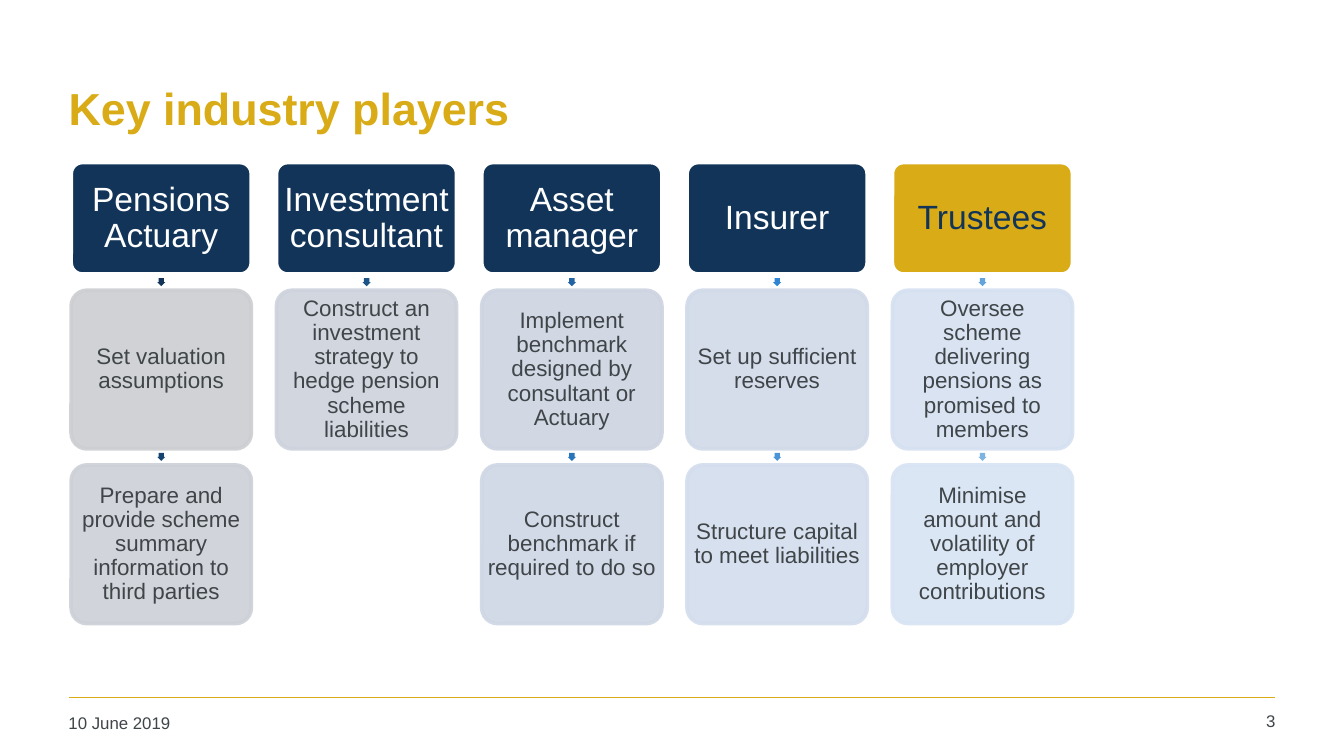
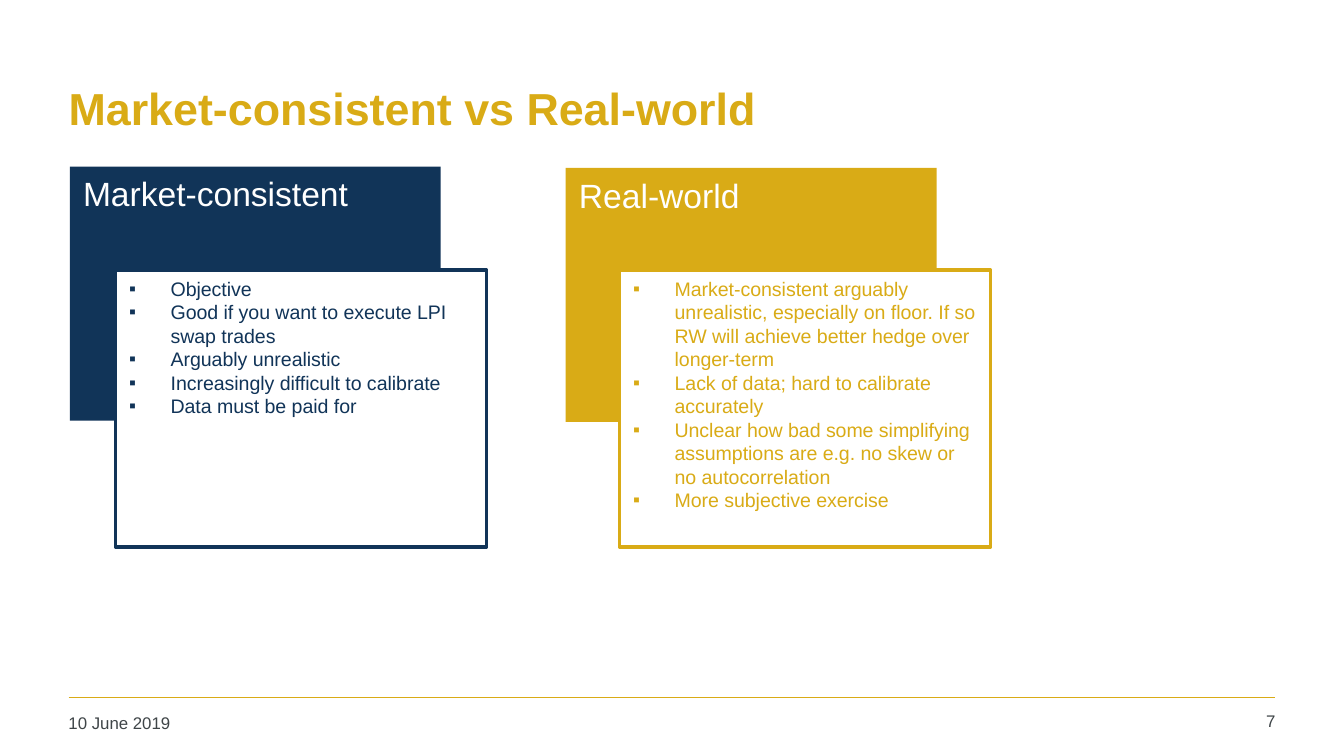
from lxml.etree import SubElement
from pptx import Presentation
from pptx.dml.color import RGBColor
from pptx.enum.shapes import MSO_CONNECTOR, MSO_SHAPE
from pptx.enum.text import MSO_ANCHOR, MSO_AUTO_SIZE, PP_ALIGN
from pptx.oxml.ns import qn
from pptx.util import Inches, Pt

NAVY, GOLD, GREY, WHITE = "113458", "D9AB16", "3F4548", "FFFFFF"


def paint(item, fill=None, line=None, width=2, alpha=None):
    """Set fill and outline from hex strings; alpha is a percentage."""
    for part, tone in ((item.fill, fill), (item.line.fill, line)):
        if tone is None:
            part.background()
            continue
        part.solid()
        part.fore_color.rgb = RGBColor.from_string(tone)
    if line:
        item.line.width = Pt(width)
    if alpha:
        for tone in item._element.spPr.iter(qn("a:srgbClr")):
            SubElement(tone, qn("a:alpha"), val=str(alpha * 1000))


def style(item, size, tone, align=PP_ALIGN.LEFT, anchor=MSO_ANCHOR.TOP,
          inset=(0.1, 0.05), bold=False, space=1.0):
    """Format all text in a shape."""
    frame = item.text_frame
    frame.word_wrap = True
    frame.auto_size = MSO_AUTO_SIZE.NONE
    frame.vertical_anchor = anchor
    frame.margin_left = frame.margin_right = Inches(inset[0])
    frame.margin_top = frame.margin_bottom = Inches(inset[1])
    for para in frame.paragraphs:
        para.alignment = align
        para.line_spacing = space
        para.space_before = Pt(0)
        for run in para.runs:
            run.font.name = "Arial"
            run.font.size = Pt(size)
            run.font.bold = bold
            run.font.color.rgb = RGBColor.from_string(tone)


deck = Presentation()
deck.slide_width = Inches(10)
deck.slide_height = deck.slide_width * 9 // 16

# Shared frame: title, gold rule, date and page number
TITLES = (("Key industry players", "3", 5),
          ("Market-consistent vs Real-world", "7", 3))
pages = []
for title, num, layout in TITLES:
    page = deck.slides.add_slide(deck.slide_layouts[layout])
    pages.append(page)
    head = page.shapes.title
    head.left, head.top = Inches(0.43), Inches(0.33)
    head.width, head.height = Inches(9.07), Inches(0.94)
    head.text_frame.text = title
    style(head, 24, GOLD, anchor=MSO_ANCHOR.MIDDLE, inset=(0.08, 0.04), bold=True)

    rule = page.shapes.add_connector(MSO_CONNECTOR.STRAIGHT, Inches(0.51),
                                     Inches(5.19), Inches(9.49), Inches(5.19))
    rule.line.color.rgb = RGBColor.from_string(GOLD)
    rule.line.width = Pt(1)
    SubElement(rule._element.spPr, qn("a:effectLst"))

    for text, left, top, width, align in (
            ("10 June 2019", 0.43, 5.26, 2.2, PP_ALIGN.LEFT),
            (num, 8.86, 5.25, 0.71, PP_ALIGN.RIGHT)):
        foot = page.shapes.add_textbox(Inches(left), Inches(top),
                                       Inches(width), Inches(0.27))
        foot.text_frame.text = text
        style(foot, 9, GREY, align, inset=(0.08, 0.04))

# Slide 1: one column per player; each duty has text, box tone, arrow tone
PLAYERS = (
    ("Pensions Actuary", NAVY, WHITE, (
        ("Set valuation assumptions", "CCCED1", "113458"),
        ("Prepare and provide scheme summary information to third parties",
         "CDD0D7", "164471"))),
    ("Investment consultant", NAVY, WHITE, (
        ("Construct an investment strategy to hedge pension scheme liabilities",
         "CDD2DC", "1C548A"),)),
    ("Asset manager", NAVY, WHITE, (
        ("Implement benchmark designed by consultant or Actuary",
         "CED4E1", "2264A3"),
        ("Construct benchmark if required to do so", "CFD7E5", "2874BB"))),
    ("Insurer", NAVY, WHITE, (
        ("Set up sufficient reserves", "D1DAE9", "2F85D2"),
        ("Structure capital to meet liabilities", "D3DDED", "4995D7"))),
    ("Trustees", GOLD, NAVY, (
        ("Oversee scheme delivering pensions as promised to members",
         "D5E1F1", "63A4DC"),
        ("Minimise amount and volatility of employer contributions",
         "D8E4F4", "7CB3E1"))),
)
FIRST, LAST, WIDE = 0.53, 6.64, 1.34
STEP = (LAST - FIRST) / (len(PLAYERS) - 1)
ROWS = ((2.16, 2.07), (3.46, 3.37))  # tops of box and arrow

shapes = pages[0].shapes
for col, (name, fill, ink, duties) in enumerate(PLAYERS):
    left = FIRST + col * STEP
    cells = [(name, 1.21, 0.83, fill, WHITE, None, 18, ink, 0.03)]
    for (text, tone, dart), (top, tip) in zip(duties, ROWS):
        cells.append((text, top, 1.18, tone, tone, 90, 12, GREY, 0.01))
        arrow = shapes.add_shape(MSO_SHAPE.RIGHT_ARROW, Inches(left + 0.64),
                                 Inches(tip), Inches(0.06), Inches(0.06))
        arrow.rotation = 90
        arrow.adjustments[0] = 0.67
        arrow.shadow.inherit = False
        paint(arrow, dart)
    for text, top, high, tone, edge, alpha, size, ink, inset in cells:
        box = shapes.add_shape(MSO_SHAPE.ROUNDED_RECTANGLE, Inches(left),
                               Inches(top), Inches(WIDE), Inches(high))
        box.adjustments[0] = 0.1
        box.shadow.inherit = False
        paint(box, tone, edge, alpha=alpha)
        box.text_frame.text = text
        style(box, size, ink, PP_ALIGN.CENTER, MSO_ANCHOR.MIDDLE,
              (inset, inset), space=0.9)

# Slide 2: coloured panel with an overlapping list for each approach
VIEWS = (
    ("Market-consistent", NAVY, 0.52, 1.24, 0.86, (
        "Objective",
        "Good if you want to execute LPI swap trades",
        "Arguably unrealistic",
        "Increasingly difficult to calibrate",
        "Data must be paid for")),
    ("Real-world", GOLD, 4.21, 1.25, 4.61, (
        "Market-consistent arguably unrealistic, especially on floor. "
        "If so RW will achieve better hedge over longer-term",
        "Lack of data; hard to calibrate accurately",
        "Unclear how bad some simplifying assumptions are e.g. no skew "
        "or no autocorrelation",
        "More subjective exercise")),
)
shapes = pages[1].shapes
for slot, (name, tone, left, top, inner, points) in enumerate(VIEWS, 1):
    panel = shapes.add_shape(MSO_SHAPE.RECTANGLE, Inches(left), Inches(top),
                             Inches(2.76), Inches(1.89))
    panel.shadow.inherit = False
    paint(panel, tone)
    panel.text_frame.text = name
    style(panel, 18, WHITE)

    body = shapes.placeholders[slot]
    body.left, body.top = Inches(inner), Inches(2.01)
    body.width, body.height = Inches(2.76), Inches(2.06)
    paint(body, WHITE, tone)
    body.text_frame.text = "\n".join(points)
    for para in body.text_frame.paragraphs:
        props = para._p.get_or_add_pPr()
        props.set("marL", str(Inches(0.31)))
        props.set("indent", str(-Inches(0.31)))
        SubElement(props, qn("a:buFont"), typeface="Arial")
        SubElement(props, qn("a:buChar"), char="▪")
    style(body, 10.5, tone)
    # Bring the list above its panel
    shapes._spTree.append(body._element)

deck.save("out.pptx")
